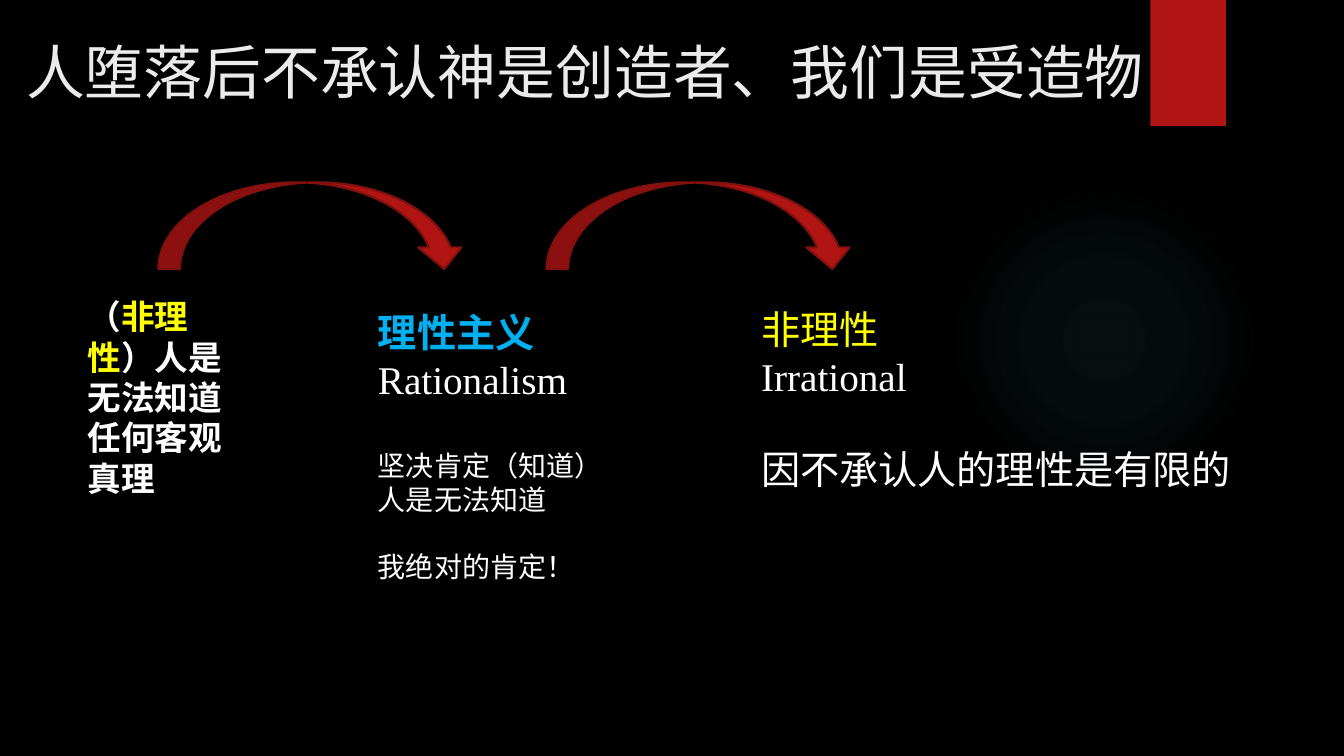
import pptx
import pptx.util
import pptx.dml.color
import pptx.enum.shapes
import pptx.enum.text
import pptx.oxml
from pptx.util import Inches, Pt

COLORS = {"black": "000000", "white": "FFFFFF", "title": "EBEBEB", "red": "B01513",
          "dark red": "82100E", "yellow": "FFFF00", "blue": "00B0F0", "glow": "50B9C1"}
SERIF = "Times New Roman"
SHAPES = pptx.enum.shapes.MSO_SHAPE


def rgb(name):
    return pptx.dml.color.RGBColor.from_string(COLORS[name])


def add_text(left, top, width, height, lines, wrap=True):
    """Each line: (runs as (text, color), size, bold, font, space before)."""
    frame = slide.shapes.add_textbox(
        Inches(left), Inches(top), Inches(width), Inches(height)).text_frame
    frame.word_wrap = wrap
    frame.vertical_anchor = pptx.enum.text.MSO_ANCHOR.TOP
    for index, (runs, size, bold, font, gap) in enumerate(lines):
        paragraph = frame.paragraphs[0] if index == 0 else frame.add_paragraph()
        if gap:
            paragraph.space_before = Pt(gap)
        paragraph.font.size = Pt(size)
        paragraph.font.bold = bold
        paragraph.font.name = font
        if len(runs) == 1:
            paragraph.font.color.rgb = rgb(runs[0][1])
        for text, color in runs:
            run = paragraph.add_run()
            run.text = text
            if len(runs) > 1:
                run.font.color.rgb = rgb(color)


presentation = pptx.Presentation()
presentation.slide_width = Inches(13.33)
presentation.slide_height = Inches(7.5)
slide = presentation.slides.add_slide(presentation.slide_layouts[6])
slide.background.fill.solid()
slide.background.fill.fore_color.rgb = rgb("black")

# Faint round glow: a radial fade to transparent
glow = slide.shapes.add_shape(
    SHAPES.OVAL, Inches(9.41), Inches(1.83), Inches(3.08), Inches(3.08))
glow.shadow.inherit = False
glow.line.fill.background()
stops = "".join(
    f'<a:gs pos="{position * 1000}"><a:srgbClr val="{COLORS["glow"]}">'
    f'<a:alpha val="{alpha * 1000}"/></a:srgbClr></a:gs>'
    for position, alpha in [(0, 7), (36, 6), (69, 0)])
fade = pptx.oxml.parse_xml(
    '<a:gradFill xmlns:a="http://schemas.openxmlformats.org/drawingml/2006/main">'
    f'<a:gsLst>{stops}</a:gsLst><a:path path="circle">'
    '<a:fillToRect l="50000" t="50000" r="50000" b="50000"/></a:path></a:gradFill>')
glow._element.spPr.find(pptx.oxml.ns.qn("a:prstGeom")).addnext(fade)

# Red tab at the top edge
tab = slide.shapes.add_shape(
    SHAPES.RECTANGLE, Inches(11.41), 0, Inches(0.75), Inches(1.25))
tab.shadow.inherit = False
tab.fill.solid()
tab.fill.fore_color.rgb = rgb("red")
tab.line.fill.background()

# Title
add_text(0.16, 0.31, 11.44, 1.04, [
    ([("人堕落后不承认神是创造者、我们是受造物", "title")], 42, False, "League Spartan", 0)])

# Curved arrows between the three stages
for left in (1.57, 5.42):
    arrow = slide.shapes.add_shape(
        SHAPES.CURVED_UP_ARROW, Inches(left), Inches(1.81), Inches(3.05), Inches(0.86))
    arrow._element.spPr.xfrm.set("flipV", "1")
    arrow.shadow.inherit = False
    arrow.fill.solid()
    arrow.fill.fore_color.rgb = rgb("red")
    arrow.line.color.rgb = rgb("dark red")
    arrow.line.width = Pt(1.5)

# Stage 1: no objective truth
add_text(0.77, 2.89, 1.81, 1.72, [
    ([("（", "white"), ("非理性", "yellow"), ("）人是无法知道任何客观真理", "white")],
     24, True, SERIF, 0)])

# Stage 2: rationalism
add_text(3.65, 3.01, 2.45, 2.86, [
    ([("理性主义", "blue")], 28, True, SERIF, 0),
    ([("Rationalism", "white")], 28, False, SERIF, 0),
    ([("坚决肯定（知道）", "white")], 20, False, SERIF, 33),
    ([("人是无法知道", "white")], 20, False, SERIF, 0),
    ([("我绝对的肯定！", "white")], 20, False, SERIF, 24)], wrap=False)

# Stage 3: the irrational
add_text(7.45, 2.98, 4.91, 1.99, [
    ([("非理性", "yellow")], 28, False, SERIF, 0),
    ([("Irrational", "white")], 28, False, SERIF, 0),
    ([("因不承认人的理性是有限的", "white")], 28, False, SERIF, 33)], wrap=False)

presentation.save("out.pptx")
